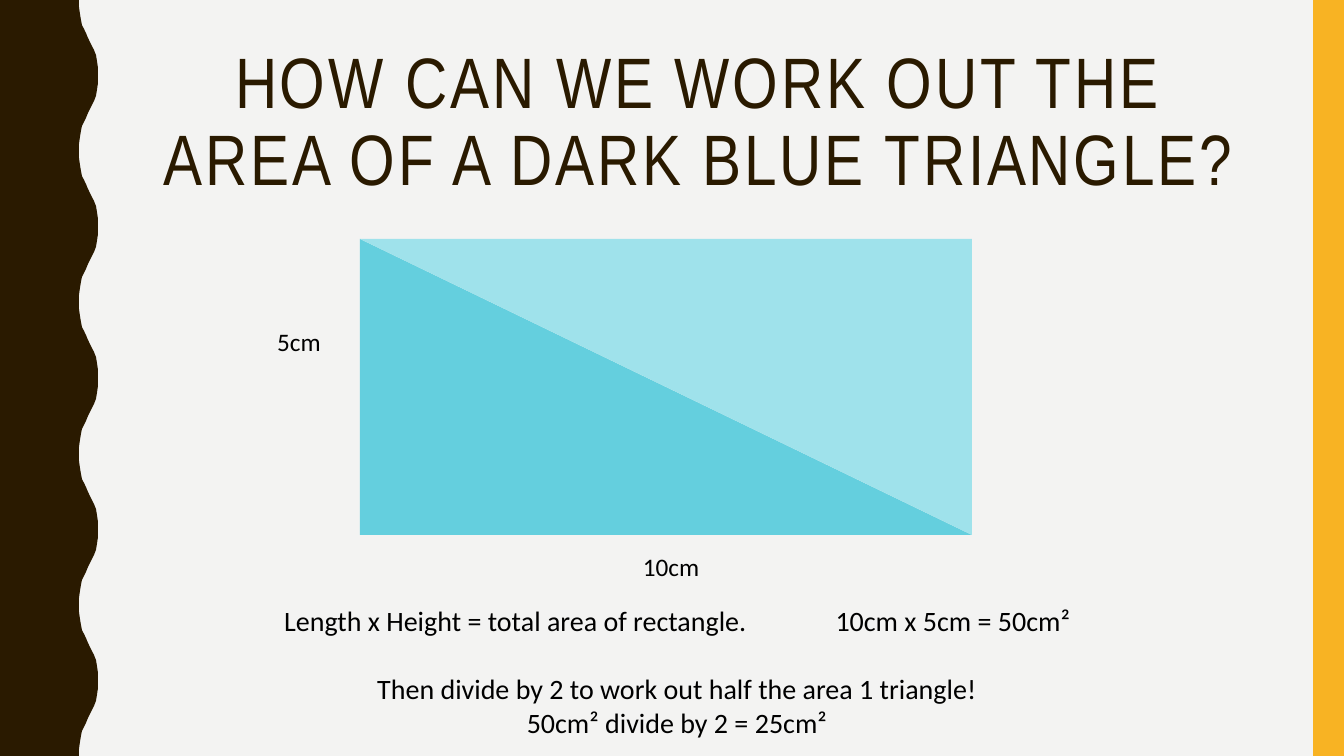
from pptx import Presentation
from pptx.dml.color import RGBColor
from pptx.enum.shapes import MSO_SHAPE
from pptx.enum.text import MSO_ANCHOR, MSO_AUTO_SIZE, PP_ALIGN
from pptx.util import Emu, Pt

RECT = MSO_SHAPE.RECTANGLE
CORNER = MSO_SHAPE.RIGHT_TRIANGLE
CENTER = PP_ALIGN.CENTER
MIDDLE = MSO_ANCHOR.MIDDLE
FIXED = MSO_AUTO_SIZE.NONE

SCALE = 914400 / 100.8
WIDTH, HEIGHT = 1344, 756
WAVES = 5
SWING = [(79, 0), (79, 7), (80, 14), (81, 20), (82, 25), (84, 29),
         (86, 33), (88, 38), (90, 42), (92, 46), (94, 50), (96, 55),
         (97, 61), (98, 68), (98, 76)]
BROWN, GOLD, PAPER, BLACK = "2A1A00", "F8B323", "F3F3F2", "000000"
DARK, LIGHT = "64CFDE", "9FE2EB"


def px(count):
    return Emu(round(count * SCALE))


def color(code):
    return RGBColor.from_string(code)


def paint(shape, code):
    shape.shadow.inherit = False
    shape.fill.solid()
    shape.fill.fore_color.rgb = color(code)
    shape.line.fill.background()


def add_block(slide, kind, box, code, turn=0):
    block = slide.shapes.add_shape(kind, *map(px, box))
    block.rotation = turn
    paint(block, code)


def add_wave(slide):
    period = HEIGHT / WAVES
    cycle = SWING + [(x, period - y) for x, y in reversed(SWING[1:-1])]
    edge = [(x, round(wave * period + y))
            for wave in range(WAVES) for x, y in cycle]
    maker = slide.shapes.build_freeform(0, 0, scale=SCALE)
    maker.add_line_segments(edge + [(SWING[0][0], HEIGHT), (0, HEIGHT)], close=True)
    paint(maker.convert_to_shape(), BROWN)


def style(para, font, size, code):
    para.alignment = CENTER
    para.font.name = font
    para.font.size = Pt(size)
    para.font.color.rgb = color(code)


def add_title(slide, text):
    title = slide.shapes.title
    title.left, title.top, title.width, title.height = map(px, (138, 42, 1122, 164))
    frame = title.text_frame
    frame.text = text
    frame.word_wrap = True
    frame.auto_size = FIXED
    frame.vertical_anchor = MIDDLE
    para = frame.paragraphs[0]
    style(para, "Arial Narrow", 51, BROWN)
    para.line_spacing = 0.9
    para.runs[0].font._element.set("spc", "200")


def add_text(slide, text, box, size):
    frame = slide.shapes.add_textbox(*map(px, box)).text_frame
    frame.word_wrap = True
    frame.text = text
    for para in frame.paragraphs:
        style(para, "Calibri", size, BLACK)


def main():
    deck = Presentation()
    deck.slide_width, deck.slide_height = px(WIDTH), px(HEIGHT)
    slide = deck.slides.add_slide(deck.slide_layouts[5])
    back = slide.background.fill
    back.solid()
    back.fore_color.rgb = color(PAPER)

    add_wave(slide)
    add_block(slide, RECT, (1313, 0, 31, HEIGHT), GOLD)
    add_title(slide, "HOW CAN WE WORK OUT THE AREA OF A DARK BLUE TRIANGLE?")

    area = (360, 239, 612, 296)
    add_block(slide, CORNER, area, DARK)
    add_block(slide, CORNER, area, LIGHT, 180)

    add_text(slide, "10cm", (523, 546, 296, 40), 18)
    add_text(slide, "5cm", (225, 321, 148, 40), 18)
    add_text(slide, "Length x Height = total area of rectangle.", (255, 599, 521, 44), 20)
    add_text(slide, "10cm x 5cm = 50cm²", (806, 599, 294, 44), 20)
    add_text(slide, "Then divide by 2 to work out half the area 1 triangle!\n"
             "50cm² divide by 2 = 25cm²", (125, 667, 1104, 77), 20)
    deck.save("out.pptx")


if __name__ == "__main__":
    main()
